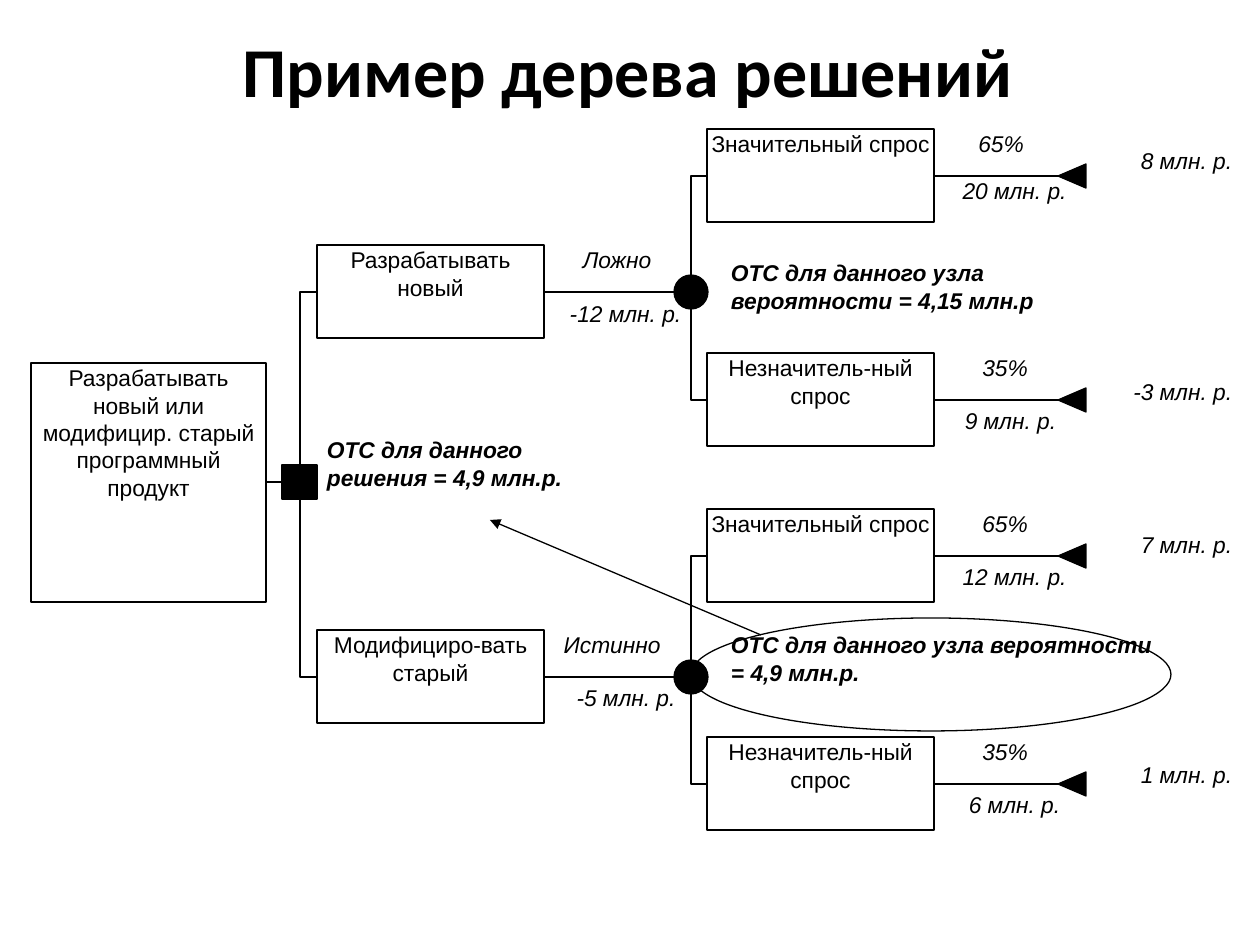
import pptx
import pptx.util
import pptx.dml.color
import pptx.enum.shapes
import pptx.enum.text
import pptx.oxml.ns
import lxml.etree

BLACK = pptx.dml.color.RGBColor(0, 0, 0)
WHITE = pptx.dml.color.RGBColor(255, 255, 255)
SHAPES = pptx.enum.shapes.MSO_SHAPE
CONNECTORS = pptx.enum.shapes.MSO_CONNECTOR
ALIGN = pptx.enum.text.PP_ALIGN
ANCHOR = pptx.enum.text.MSO_ANCHOR

BOX_WIDTH, BOX_HEIGHT = 227, 93
OPTION_LEFT, LEAF_LEFT = 317, 707
DECISION_X, CHANCE_X, LEAF_END = 300, 691, 1058
NODE_RADIUS = 17
LABEL_HEIGHT = 47

OPTIONS = [
    (292, "Разрабатывать новый", ("Ложно", 551, 245, 132), ("-12 млн. р.", 544, 299, 163)),
    (677, "Модифициро-вать старый", ("Истинно", 534, 630, 156), ("-5 млн. р.", 551, 683, 150)),
]
HIGH, LOW = "Значительный спрос", "Незначитель-ный спрос"
LEAVES = [
    (292, 176, HIGH, ("65%", 935), ("20 млн. р.", 939, 176), ("8 млн. р.", 146)),
    (292, 400, LOW, ("35%", 939), ("9 млн. р.", 935, 406), ("-3 млн. р.", 377)),
    (677, 556, HIGH, ("65%", 939), ("12 млн. р.", 939, 562), ("7 млн. р.", 530)),
    (677, 784, LOW, ("35%", 939), ("6 млн. р.", 939, 790), ("1 млн. р.", 760)),
]


def px(value):
    return pptx.util.Emu(round(value * 914400 / 126))


def write_text(shape, text, align, bold=False, italic=False):
    frame = shape.text_frame
    frame.text = text
    frame.word_wrap = True
    frame.vertical_anchor = ANCHOR.TOP
    frame.margin_left = frame.margin_right = px(3)
    frame.margin_top = frame.margin_bottom = px(1)
    for paragraph in frame.paragraphs:
        paragraph.alignment = align
        for run in paragraph.runs:
            run.font.name = "Arial"
            run.font.size = pptx.util.Pt(13)
            run.font.bold = bold
            run.font.italic = italic
            run.font.color.rgb = BLACK


def add_figure(slide, kind, left, top, width, height, fill=None, outlined=True):
    shape = slide.shapes.add_shape(kind, px(left), px(top), px(width), px(height))
    shape.shadow.inherit = False
    if fill is None:
        shape.fill.background()
    else:
        shape.fill.solid()
        shape.fill.fore_color.rgb = fill
    if outlined:
        shape.line.color.rgb = BLACK
        shape.line.width = pptx.util.Pt(0.75)
    else:
        shape.line.fill.background()
    return shape


def add_box(slide, text, left, top, width=BOX_WIDTH, height=BOX_HEIGHT):
    box = add_figure(slide, SHAPES.RECTANGLE, left, top, width, height, WHITE)
    write_text(box, text, ALIGN.CENTER)


def add_note(slide, text, left, top, width, height=84):
    note = add_figure(slide, SHAPES.RECTANGLE, left, top, width, height, WHITE, False)
    write_text(note, text, ALIGN.LEFT, bold=True, italic=True)


def add_label(slide, text, left, top, width, align=ALIGN.CENTER):
    label = slide.shapes.add_textbox(px(left), px(top), px(width), px(LABEL_HEIGHT))
    write_text(label, text, align, italic=True)


def add_line(slide, start, end, kind=CONNECTORS.STRAIGHT):
    line = slide.shapes.add_connector(kind, px(start[0]), px(start[1]), px(end[0]), px(end[1]))
    line.line.color.rgb = BLACK
    line.line.width = pptx.util.Pt(0.75)
    lxml.etree.SubElement(line._element.spPr, pptx.oxml.ns.qn("a:effectLst"))
    return line


def add_branch(slide, node_x, node_y, box_left, box_y):
    edge_y = node_y + (NODE_RADIUS if box_y > node_y else -NODE_RADIUS)
    branch = add_line(slide, (box_left, box_y), (node_x, edge_y), CONNECTORS.ELBOW)
    branch._element.spPr.find(pptx.oxml.ns.qn("a:prstGeom")).set("prst", "bentConnector2")


def add_arrow(slide, start, end):
    arrow = add_line(slide, start, end)
    outline = arrow.line._get_or_add_ln()
    lxml.etree.SubElement(outline, pptx.oxml.ns.qn("a:tailEnd"), type="triangle")


def add_title(slide, text):
    title = slide.shapes.title
    title.left, title.top, title.width, title.height = px(68), px(21), px(1119), px(97)
    title.text_frame.text = text
    title.text_frame.vertical_anchor = ANCHOR.MIDDLE
    paragraph = title.text_frame.paragraphs[0]
    paragraph.alignment = ALIGN.CENTER
    font = paragraph.runs[0].font
    font.name = "Calibri"
    font.size = pptx.util.Pt(40)
    font.bold = True
    font.color.rgb = BLACK


def add_root(slide):
    add_box(slide, "Разрабатывать новый или модифицир. старый программный продукт",
            31, 363, 235, 239)
    add_figure(slide, SHAPES.RECTANGLE, 282, 465, 35, 34, BLACK)
    add_line(slide, (266, 482), (282, 482))


def add_option(slide, y, text, choice, cost):
    add_box(slide, text, OPTION_LEFT, y - 47)
    add_branch(slide, DECISION_X, 482, OPTION_LEFT, y)
    add_figure(slide, SHAPES.OVAL, CHANCE_X - NODE_RADIUS, y - NODE_RADIUS,
               2 * NODE_RADIUS, 2 * NODE_RADIUS, BLACK)
    add_line(slide, (OPTION_LEFT + BOX_WIDTH, y), (CHANCE_X - NODE_RADIUS, y))
    add_label(slide, *choice)
    add_label(slide, *cost)


def add_leaf(slide, chance_y, y, text, chance, amount, payoff):
    add_box(slide, text, LEAF_LEFT, y - 47)
    add_branch(slide, CHANCE_X, chance_y, LEAF_LEFT, y)
    triangle = add_figure(slide, SHAPES.ISOSCELES_TRIANGLE, 1060, y - 14, 24, 28, BLACK)
    triangle.rotation = 270
    add_line(slide, (LEAF_LEFT + BOX_WIDTH, y), (LEAF_END, y))
    add_label(slide, chance[0], chance[1], y - 47, 132)
    add_label(slide, *amount, 151)
    add_label(slide, payoff[0], 1079, payoff[1], 156, ALIGN.RIGHT)


def main():
    presentation = pptx.Presentation()
    presentation.slide_width, presentation.slide_height = px(1260), px(945)
    slide = presentation.slides.add_slide(presentation.slide_layouts[5])
    add_title(slide, "Пример дерева решений")
    add_root(slide)
    for option in OPTIONS:
        add_option(slide, *option)
    for leaf in LEAVES:
        add_leaf(slide, *leaf)
    add_note(slide, "ОТС для данного узла вероятности = 4,15 млн.р", 728, 258, 422)
    add_note(slide, "ОТС для данного узла вероятности = 4,9 млн.р.", 728, 630, 436)
    add_figure(slide, SHAPES.OVAL, CHANCE_X, 618, 480, 113)
    add_note(slide, "ОТС для данного\nрешения = 4,9 млн.р.", 324, 435, 334)
    add_arrow(slide, (761, 635), (490, 520))
    presentation.save("out.pptx")


if __name__ == "__main__":
    main()
